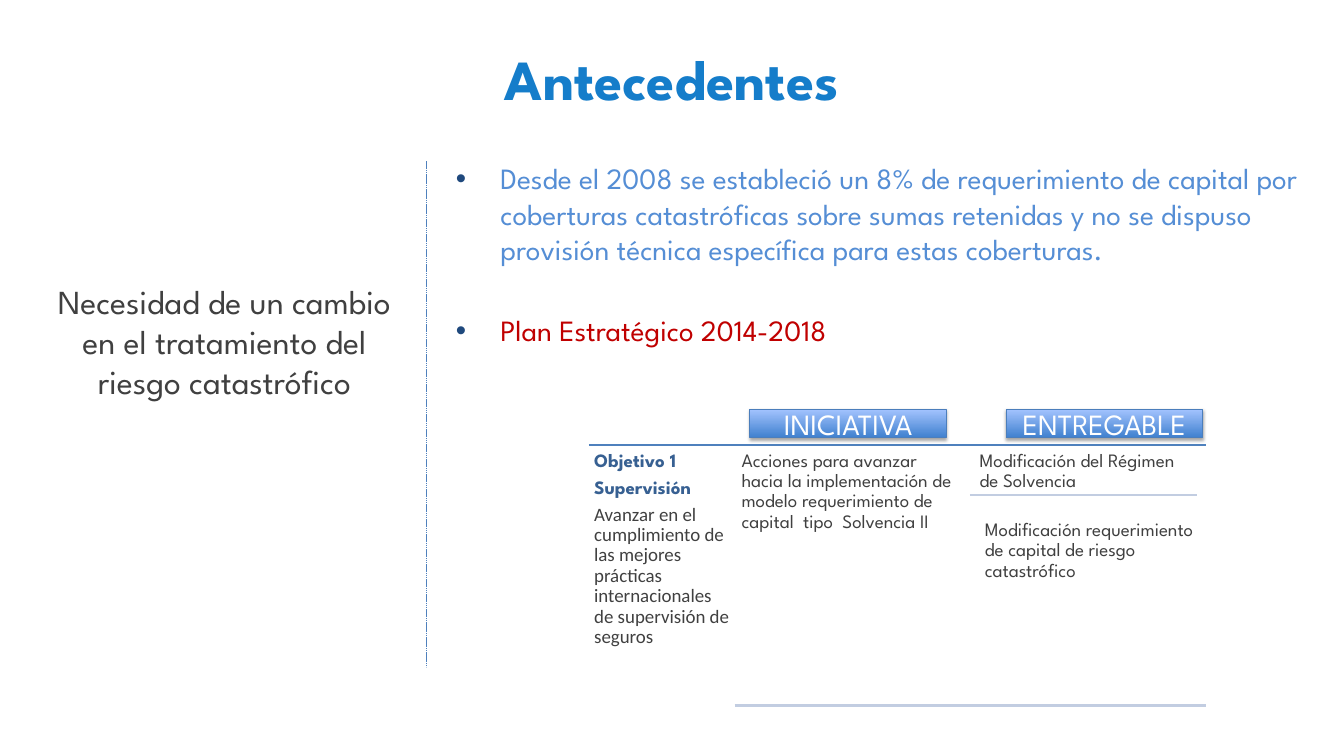
from lxml import etree
from pptx import Presentation
from pptx.dml.color import RGBColor
from pptx.enum import dml, shapes, text
from pptx.oxml import ns
from pptx.util import Inches, Pt

FONT = "League Spartan"
GRAY = "404040"
RULE = "C2CDE1"
BLUE = "4F81BD"


def hue(code):
    return RGBColor.from_string(code)


def style(para, size, color, bold=False, font=FONT):
    for run in para.runs:
        run.font.size = Pt(size)
        run.font.name = font
        run.font.bold = bold
        run.font.color.rgb = hue(color)


def node(parent, tag, **attrs):
    return etree.SubElement(parent, ns.qn(tag), attrs)


def place(shape, x, y, w, h):
    shape.left, shape.top = Inches(x), Inches(y)
    shape.width, shape.height = Inches(w), Inches(h)


def inset(frame, side, top):
    frame.word_wrap = True
    frame.auto_size = text.MSO_AUTO_SIZE.NONE
    frame.margin_left = frame.margin_right = Inches(side)
    frame.margin_top = frame.margin_bottom = Inches(top)


def bullet(para, mark=None, color=None, hang=0):
    """Set the bullet and hanging indent, or remove them when no mark is given."""
    props = para._p.get_or_add_pPr()
    props.set("marL", str(Inches(hang)))
    props.set("indent", str(-Inches(hang)))
    if mark:
        node(node(props, "a:buClr"), "a:srgbClr", val=color)
        node(props, "a:buFont", typeface="Arial")
        node(props, "a:buChar", char=mark)
    else:
        node(props, "a:buNone")


def shade(shape, alpha=None, dist=0):
    """Give the shape a soft shadow below it, or none."""
    props = shape._element.spPr
    for old in props.findall(ns.qn("a:effectLst")):
        props.remove(old)
    effects = node(props, "a:effectLst")
    if alpha:
        outer = node(effects, "a:outerShdw", blurRad=str(Pt(3.1)),
                     dist=str(Pt(dist)), dir="5400000", rotWithShape="0")
        black = node(outer, "a:srgbClr", val="000000")
        node(black, "a:alpha", val=str(alpha * 1000))


def rule(slide, x1, y1, x2, y2, color, width=2):
    line = slide.shapes.add_connector(
        shapes.MSO_CONNECTOR.STRAIGHT,
        Inches(x1), Inches(y1), Inches(x2), Inches(y2))
    line.line.color.rgb = hue(color)
    line.line.width = Pt(width)
    shade(line)
    return line


def note(slide, x, y, w, h, items):
    """Add a table-like text cell; each item is (words, color, bold, font)."""
    box = slide.shapes.add_textbox(Inches(x), Inches(y), Inches(w), Inches(h))
    frame = box.text_frame
    inset(frame, 0.07, 0.07)
    frame.text = "\n".join(item[0] for item in items)
    for para, (_, color, bold, font) in zip(frame.paragraphs, items):
        para.line_spacing = 0.9
        para.space_after = Pt(6.3)
        style(para, 18, color, bold, font)


def header(slide, x, label):
    box = slide.shapes.add_shape(shapes.MSO_SHAPE.RECTANGLE, Inches(x),
                                 Inches(5.41), Inches(2.6), Inches(0.38))
    box.fill.gradient()
    box.fill.gradient_angle = 90
    for stop, color in zip(box.fill.gradient_stops, ("3F80CE", "A4C4FF")):
        stop.color.rgb = hue(color)
    box.line.color.rgb = hue("4B7EBC")
    box.line.width = Pt(0.75)
    shade(box, 35, 1.8)
    frame = box.text_frame
    inset(frame, 0.1, 0.05)
    frame.vertical_anchor = text.MSO_ANCHOR.MIDDLE
    frame.text = label
    frame.paragraphs[0].alignment = text.PP_ALIGN.CENTER
    style(frame.paragraphs[0], 28, "FFFFFF")


def heading(title):
    place(title, 0.89, 0.22, 16, 1.62)
    frame = title.text_frame
    inset(frame, 0.16, 0.08)
    frame.vertical_anchor = text.MSO_ANCHOR.MIDDLE
    frame.text = "Antecedentes"
    frame.paragraphs[0].alignment = text.PP_ALIGN.CENTER
    style(frame.paragraphs[0], 54, "157DCA", True)


def theme(body):
    place(body, 0.52, 2.38, 4.9, 6.44)
    frame = body.text_frame
    inset(frame, 0.16, 0.08)
    frame.margin_top = Inches(1.33)
    frame.text = ("Necesidad de un cambio en el tratamiento "
                  "del riesgo catastrófico")
    para = frame.paragraphs[0]
    para.alignment = text.PP_ALIGN.CENTER
    para.space_before = Pt(0)
    bullet(para)
    style(para, 32, GRAY)


def points(body):
    place(body, 5.87, 2.04, 11.61, 3.66)
    frame = body.text_frame
    inset(frame, 0.16, 0.08)
    items = [
        ("Desde el 2008 se estableció un 8% de requerimiento de capital por "
         "coberturas catastróficas sobre sumas retenidas y no se dispuso "
         "provisión técnica específica para estas coberturas.", "558ED5", 0),
        ("Plan Estratégico 2014-2018", "C00000", 44),
    ]
    frame.text = "\n".join(item[0] for item in items)
    for para, (_, color, gap) in zip(frame.paragraphs, items):
        para.space_before = Pt(gap)
        bullet(para, "•", "1F497D", 0.59)
        style(para, 28, color)


def plan(slide):
    """Draw the strategic plan: goal, initiative and deliverables."""
    top = 5.89
    rule(slide, 7.79, top, 15.96, top, BLUE)
    note(slide, 7.79, top, 1.93, 3.6, [
        ("Objetivo 1", "376092", True, FONT),
        ("Supervisión", "376092", True, FONT),
        ("Avanzar en el cumplimiento de las mejores prácticas "
         "internacionales de supervisión de seguros", GRAY, False, "Calibri"),
    ])
    cells = [
        (9.74, top, 3.27, "Acciones para avanzar hacia la implementación de "
                          "modelo requerimiento de capital  tipo  Solvencia II"),
        (12.89, top, 1.64, "Modificación del Régimen de Solvencia"),
        (12.96, 6.81, 1.64, "Modificación requerimiento de capital de riesgo "
                            "catastrófico"),
    ]
    for x, y, h, words in cells:
        note(slide, x, y, 3, h, [(words, GRAY, False, FONT)])
    rule(slide, 12.83, 6.55, 15.84, 6.55, RULE)
    rule(slide, 9.72, 9.33, 15.96, 9.33, RULE)
    header(slide, 9.92, "INICIATIVA")
    header(slide, 13.31, "ENTREGABLE")


def main():
    deck = Presentation()
    deck.slide_width, deck.slide_height = Inches(17.78), Inches(9.72)
    slide = deck.slides.add_slide(deck.slide_layouts.get_by_name("Two Content"))
    title, left, right = slide.placeholders
    heading(title)
    theme(left)
    points(right)
    split = rule(slide, 5.64, 2.13, 5.64, 8.82, BLUE, 0.5)
    split.line.dash_style = dml.MSO_LINE.SQUARE_DOT
    shade(split, 38, 1.6)
    plan(slide)
    deck.save("out.pptx")


if __name__ == "__main__":
    main()
